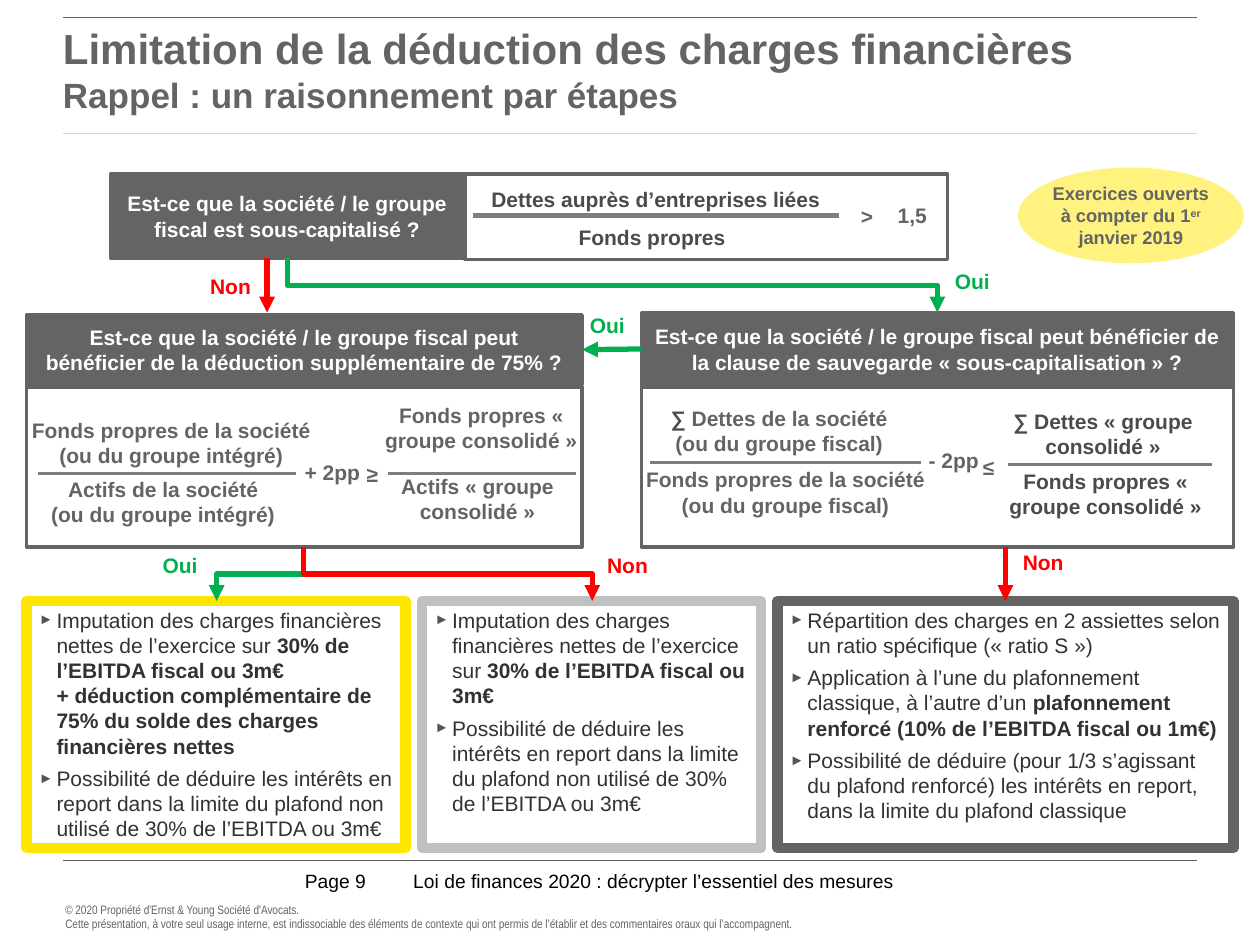
from lxml import etree
from pptx import Presentation
from pptx.dml.color import RGBColor
from pptx.enum.shapes import MSO_CONNECTOR, MSO_SHAPE
from pptx.enum.text import MSO_ANCHOR, PP_ALIGN
from pptx.oxml.ns import qn
from pptx.util import Inches, Pt

STRAIGHT, ELBOW = MSO_CONNECTOR.STRAIGHT, MSO_CONNECTOR.ELBOW
RECT, OVAL = MSO_SHAPE.RECTANGLE, MSO_SHAPE.OVAL
TOP, MID, LOW = MSO_ANCHOR.TOP, MSO_ANCHOR.MIDDLE, MSO_ANCHOR.BOTTOM
LEFT, MIDST, RIGHT = PP_ALIGN.LEFT, PP_ALIGN.CENTER, PP_ALIGN.RIGHT

GREY, DARK, INK, BAR = "646464", "4B4B4B", "323232", "7D7D7D"
WHITE, BLACK, SILVER = "FFFFFF", "000000", "C0C0C0"
YELLOW, PALE, GREEN, RED = "FFE600", "FFF27F", "00B050", "FF0000"
PAD, SLIM, NONE = (0.1, 0.05), (0, 0.04), (0, 0)


def rgb(code):
    return RGBColor.from_string(code)


def add_bullet(par):
    props = par._p.get_or_add_pPr()
    props.set("marL", str(Inches(0.14)))
    props.set("indent", str(-Inches(0.14)))
    color = etree.SubElement(props, qn("a:buClr"))
    etree.SubElement(color, qn("a:srgbClr")).set("val", "545454")
    etree.SubElement(props, qn("a:buSzPct")).set("val", "70000")
    etree.SubElement(props, qn("a:buFont")).set("typeface", "Arial")
    etree.SubElement(props, qn("a:buChar")).set("char", "►")


def add_run(par, text, size, color, bold, font, raised=False):
    """Add one run; a newline in the text becomes a line break."""
    for i, line in enumerate(text.split("\n")):
        if i:
            par.add_line_break()
        if not line:
            continue
        run = par.add_run()
        run.text = line
        run.font.size, run.font.bold, run.font.name = Pt(size), bold, font
        run.font.color.rgb = rgb(color)
        if raised:
            run._r.get_or_add_rPr().set("baseline", "30000")


def write(shape, paras, size=12, color=GREY, bold=True, align=MIDST,
          anchor=MID, pad=PAD, font="Arial", bullet=False):
    """Fill a shape; a paragraph is a string or a list of (text, changes)."""
    frame = shape.text_frame
    frame.word_wrap = True
    frame.vertical_anchor = anchor
    frame.margin_left = frame.margin_right = Inches(pad[0])
    frame.margin_top = frame.margin_bottom = Inches(pad[1])
    for i, runs in enumerate(paras):
        par = frame.add_paragraph() if i else frame.paragraphs[0]
        par.alignment = align
        if bullet:
            par.space_after = Pt(4.1)
            add_bullet(par)
        for text, change in [(runs, {})] if isinstance(runs, str) else runs:
            style = dict(size=size, color=color, bold=bold, font=font)
            add_run(par, text, **{**style, **change})


def add_text(slide, at, *paras, **style):
    write(slide.shapes.add_textbox(*map(Inches, at)), paras, **style)


def add_box(slide, at, fill=None, edge=None, width=2, kind=RECT):
    box = slide.shapes.add_shape(kind, *map(Inches, at))
    box.shadow.inherit = False
    if fill:
        box.fill.solid()
        box.fill.fore_color.rgb = rgb(fill)
    else:
        box.fill.background()
    if edge:
        box.line.color.rgb = rgb(edge)
        box.line.width = Pt(width)
    else:
        box.line.fill.background()
    return box


def add_head(slide, at, text):
    box = add_box(slide, at, GREY, GREY)
    write(box, [text], color=WHITE)
    return box


def add_list(slide, left, width, edge, *paras):
    box = add_box(slide, (left, 4.77, width, 1.96), WHITE, edge, 6)
    write(box, paras, color=INK, bold=False, align=LEFT, anchor=TOP, bullet=True)
    return box


def add_line(slide, start, end, color, width, arrow=False, kind=STRAIGHT):
    line = slide.shapes.add_connector(kind, *map(Inches, (*start, *end)))
    line.line.color.rgb = rgb(color)
    line.line.width = Pt(width)
    if arrow:
        ln = line.line._get_or_add_ln()
        etree.SubElement(ln, qn("a:tailEnd")).set("type", "triangle")
    etree.SubElement(line._element.spPr, qn("a:effectLst"))
    return line


def add_elbow(slide, start, end, color):
    """Arrow that goes down, across and down: a turned elbow connector."""
    (x1, y1), (x2, y2) = start, end
    mid_x, mid_y = (x1 + x2) / 2, (y1 + y2) / 2
    half_w, half_h = (y2 - y1) / 2, abs(x2 - x1) / 2
    side, turn = (1, 270) if x2 > x1 else (-1, 90)
    line = add_line(slide, (mid_x + side * half_w, mid_y - half_h),
                    (mid_x - side * half_w, mid_y + half_h),
                    color, 3, True, ELBOW)
    line._element.spPr.find(qn("a:xfrm")).set("rot", str(turn * 60000))


def add_rule(slide, left, right, y, color=BAR, width=1.75):
    add_line(slide, (left, y), (right, y), color, width)


def add_frame(slide):
    add_text(slide, (3.28, 6.9, 4.64, 0.22),
             "Loi de finances 2020 : décrypter l’essentiel des mesures",
             size=11, color=BLACK, bold=False, align=LEFT, anchor=TOP, pad=NONE)
    add_text(slide, (2.42, 6.9, 0.73, 0.22), "Page 9",
             size=11, color=BLACK, bold=False, align=LEFT, anchor=TOP, pad=NONE)
    add_text(slide, (0.42, 7.11, 7.5, 0.34),
             "© 2020 Propriété d'Ernst & Young Société d'Avocats.\n"
             "Cette présentation, à votre seul usage interne, est indissociable "
             "des éléments de contexte qui ont permis de l’établir et des "
             "commentaires oraux qui l’accompagnent.",
             size=7, bold=False, align=LEFT, anchor=TOP, font="Arial Narrow")
    for y, color, width in ((1.06, YELLOW, 1), (6.83, GREY, 0.25), (0.14, GREY, 0.5)):
        add_rule(slide, 0.5, 9.5, y, color, width)
    add_text(slide, (0.5, 0.14, 9, 0.94),
             [("Limitation de la déduction des charges financières\n", {"size": 24}),
              ("Rappel : un raisonnement par étapes", {})],
             size=20, align=LEFT, anchor=TOP, pad=SLIM)


def add_ratios(slide):
    add_text(slide, (3.74, 1.38, 2.93, 0.34), "Dettes auprès d’entreprises liées",
             color=DARK, anchor=LOW, pad=SLIM)
    add_text(slide, (3.77, 1.74, 2.81, 0.34), "Fonds propres",
             color=DARK, anchor=TOP, pad=SLIM)
    add_rule(slide, 3.75, 6.66, 1.71, width=3)
    add_text(slide, (6.67, 1.32, 0.42, 0.79), ">")
    add_text(slide, (7.03, 1.42, 0.42, 0.57), "1,5", pad=(0.04, 0))
    add_box(slide, (3.69, 1.38, 3.83, 0.68), edge=GREY)

    group = "(ou du groupe intégré)"
    add_text(slide, (0.3, 3.75, 1.99, 0.46), "Actifs de la société", group, pad=SLIM)
    add_text(slide, (0.24, 3.21, 2.24, 0.61), "Fonds propres de la société", group, pad=SLIM)
    add_rule(slide, 0.3, 2.35, 3.76)
    add_text(slide, (3.02, 3.78, 1.54, 0.36), "Actifs « groupe consolidé »", pad=SLIM)
    add_text(slide, (3.04, 3.04, 1.56, 0.71), "Fonds propres « groupe consolidé »", pad=SLIM)
    add_rule(slide, 3.08, 4.57, 3.76)
    add_text(slide, (2.74, 3.53, 0.43, 0.46), "≥")
    add_text(slide, (2.32, 3.51, 0.66, 0.47), "+ 2pp", align=LEFT)
    add_box(slide, (0.21, 3.07, 4.41, 1.27), edge=GREY)

    group = "(ou du groupe fiscal)"
    add_text(slide, (5.07, 3.68, 2.33, 0.45), "Fonds propres de la société", group, pad=NONE)
    add_text(slide, (5.28, 3.16, 1.81, 0.52),
             [("∑ ", {"color": DARK}), ("Dettes de la société", {})], group, pad=NONE)
    add_rule(slide, 5.16, 7.31, 3.67)
    add_text(slide, (7.67, 3.5, 0.35, 0.42), "≤")
    add_text(slide, (7.89, 3.68, 1.77, 0.48), "Fonds propres « groupe consolidé »",
             color=DARK, anchor=TOP, pad=SLIM)
    add_text(slide, (7.92, 3.18, 1.67, 0.52), "∑ Dettes « groupe consolidé »",
             color=DARK, pad=SLIM)
    add_rule(slide, 8, 9.62, 3.69)
    add_text(slide, (7.37, 3.43, 0.43, 0.44), "- 2pp", align=LEFT, pad=SLIM)
    add_box(slide, (5.09, 3.07, 4.7, 1.27), edge=GREY)


def add_steps(slide):
    add_head(slide, (0.88, 1.38, 2.8, 0.67),
             "Est-ce que la société / le groupe fiscal est sous-capitalisé ?")
    clause = add_head(slide, (5.09, 2.48, 4.7, 0.58),
                      "Est-ce que la société / le groupe fiscal peut bénéficier de "
                      "la clause de sauvegarde « sous-capitalisation » ?")
    extra = add_head(slide, (0.21, 2.5, 4.41, 0.55),
                     "Est-ce que la société / le groupe fiscal peut bénéficier de "
                     "la déduction supplémentaire de 75% ?")
    bold = {"bold": True}
    split = add_list(
        slide, 6.17, 3.62, GREY,
        "Répartition des charges en 2 assiettes selon un ratio spécifique (« ratio S »)",
        [("Application à l’une du plafonnement classique, à l’autre d’un ", {}),
         ("plafonnement renforcé (10% de l’EBITDA fiscal ou 1m€)", bold)],
        "Possibilité de déduire (pour 1/3 s’agissant du plafond renforcé) les "
        "intérêts en report, dans la limite du plafond classique")
    base = ("Imputation des charges financières nettes de l’exercice sur ", {})
    cap = "30% de l’EBITDA fiscal ou 3m€"
    more = ("\n+ déduction complémentaire de 75% du solde des charges "
            "financières nettes")
    carry = ("Possibilité de déduire les intérêts en report dans la limite du "
             "plafond non utilisé de 30% de l’EBITDA ou 3m€")
    add_list(slide, 0.21, 3.01, YELLOW, [base, (cap + more, bold)], carry)
    add_list(slide, 3.35, 2.69, SILVER, [base, (cap, bold)], carry)
    return clause, extra, split


def add_paths(slide, clause, extra, split):
    add_elbow(slide, (2.28, 2.05), (7.44, 2.48), GREEN)
    add_elbow(slide, (2.41, 4.34), (1.72, 4.77), GREEN)
    add_elbow(slide, (2.41, 4.34), (4.7, 4.77), RED)
    back = add_line(slide, (5.09, 2.77), (4.62, 2.77), GREEN, 3, True)
    back.begin_connect(clause, 1)
    back.end_connect(extra, 3)
    down = add_line(slide, (7.98, 4.34), (7.98, 4.77), RED, 3, True)
    down.end_connect(split, 0)
    add_line(slide, (2.12, 2.05), (2.12, 2.48), RED, 3, True)
    for left, top, width, word, align in (
            (7.48, 2.08, 0.7, "Oui", LEFT), (4.44, 2.43, 0.76, "Oui", MIDST),
            (1.05, 4.34, 0.76, "Oui", MIDST), (7.98, 4.31, 0.56, "Non", RIGHT),
            (4.72, 4.34, 0.68, "Non", LEFT), (1.53, 2.12, 0.56, "Non", RIGHT)):
        add_text(slide, (left, top, width, 0.3), word, align=align, anchor=TOP,
                 color=GREEN if word == "Oui" else RED)


def main():
    deck = Presentation()
    deck.slide_width, deck.slide_height = Inches(10), Inches(7.5)
    slide = deck.slides.add_slide(deck.slide_layouts[6])
    add_frame(slide)
    steps = add_steps(slide)
    add_ratios(slide)
    add_paths(slide, *steps)
    note = add_box(slide, (8.08, 1.33, 1.79, 0.76), PALE, kind=OVAL)
    write(note, [[("Exercices ouverts à compter du 1", {}), ("er", {"raised": True}),
                  (" janvier 2019", {})]], size=10.5, pad=NONE)
    deck.save("out.pptx")


if __name__ == "__main__":
    main()
